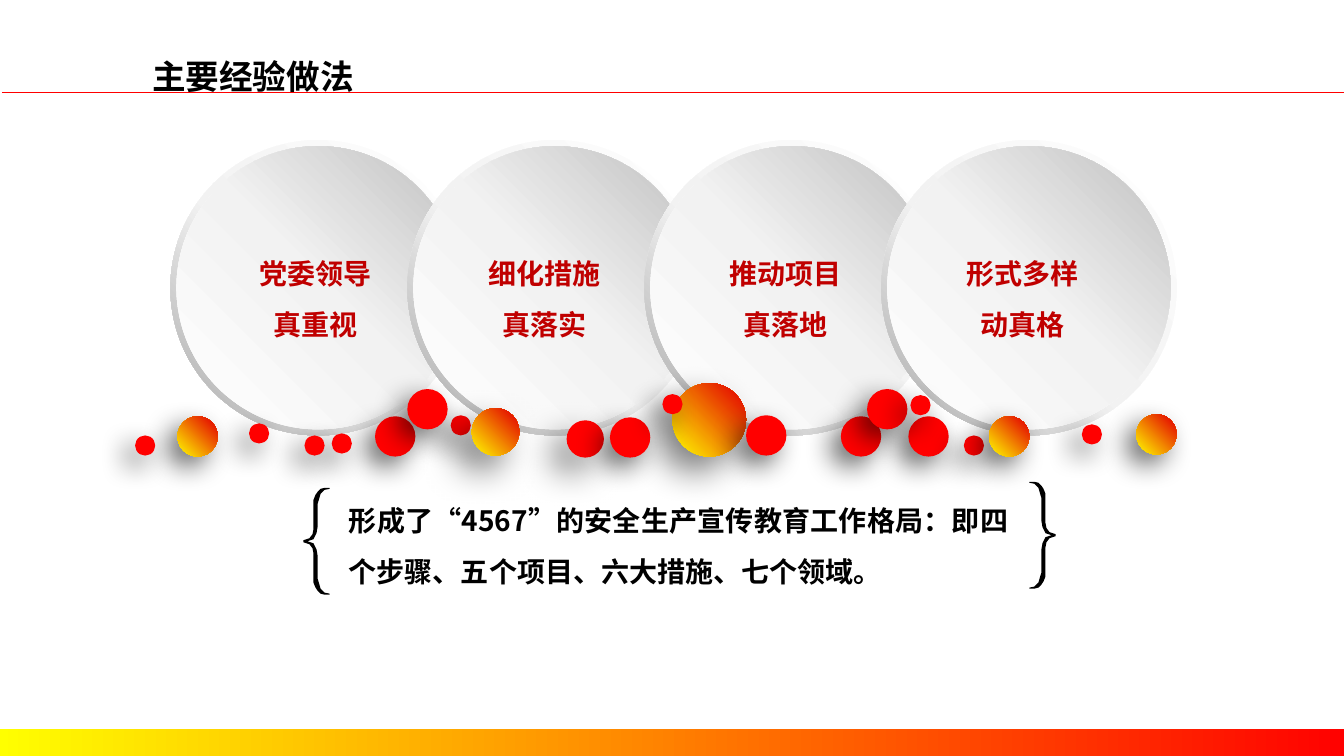
from lxml.etree import SubElement
from pptx import Presentation
from pptx.dml.color import RGBColor
from pptx.enum.lang import MSO_LANGUAGE_ID as Lang
from pptx.enum.shapes import MSO_CONNECTOR as Link, MSO_SHAPE as Kind
from pptx.enum.text import MSO_AUTO_SIZE as Fit, PP_ALIGN as Align
from pptx.oxml.ns import qn
from pptx.util import Inches, Pt

FONT = "Noto Sans CJK SC"
TITLE = "主要经验做法"
SUMMARY = "形成了“4567”的安全生产宣传教育工作格局：即四个步骤、五个项目、六大措施、七个领域。"
STEPS = [
    (2.47, ["党委领导", "真重视"]),
    (4.74, ["细化措施", "真落实"]),
    (7.13, ["推动项目", "真落地"]),
    (9.48, ["形式多样", "动真格"]),
]
RING = [(0, "FFFFFF"), (55, "F2F2F2"), (100, "A6A6A6")]
DISC = [(0, "FFFFFF"), (51, "F2F2F2"), (100, "BFBFBF")]
GOLD = [(0, "FFFF00"), (96, "E30000")]
BAND = [(0, "FFFF00"), (100, "FF0000")]
RED = "FF0000"
BALLS = [
    (6.67, 3.8, 0.73, GOLD), (8.34, 4.13, 0.4, RED), (3.72, 4.13, 0.4, RED),
    (3.29, 4.3, 0.2, RED), (9.01, 4.13, 0.4, RED), (4.47, 4.12, 0.2, RED),
    (9.56, 4.32, 0.2, RED), (5.62, 4.17, 0.37, RED), (9.81, 4.13, 0.4, GOLD),
    (6.05, 4.14, 0.4, RED), (10.73, 4.21, 0.2, RED), (8.6, 3.86, 0.4, RED),
    (3.02, 4.32, 0.2, RED), (6.57, 3.91, 0.2, RED), (4.68, 4.05, 0.47, GOLD),
    (7.4, 4.12, 0.4, RED), (1.76, 4.13, 0.4, GOLD), (1.34, 4.32, 0.2, RED),
    (4.04, 3.86, 0.4, RED), (2.47, 4.2, 0.2, RED), (9.03, 3.92, 0.2, RED),
    (11.27, 4.11, 0.4, GOLD),
]
SOFT = (60, 20, 10)
DEEP = (50, 25, 15)
OUTER = [
    (0, 0), (0.05, 0), (0.09, 0.01), (0.12, 0.04), (0.14, 0.07), (0.16, 0.12),
    (0.16, 0.41), (0.17, 0.46), (0.2, 0.5), (0.26, 0.52),
]
INNER = [
    (0, 0.01), (0.05, 0.02), (0.09, 0.06), (0.11, 0.13), (0.12, 0.16),
    (0.12, 0.39), (0.13, 0.45), (0.16, 0.51), (0.22, 0.53),
]
BRACES = [(3.27, 4.84, -1), (10.21, 4.78, 1)]
TALL = 1.06

deck = Presentation()
deck.slide_width, deck.slide_height = Inches(13.33), Inches(7.5)
slide = deck.slides.add_slide(deck.slide_layouts[6])
shapes = slide.shapes


def color(code):
    return RGBColor.from_string(code)


def paint(shape, fill, angle=315):
    shape.shadow.inherit = False
    shape.line.fill.background()
    if isinstance(fill, str):
        shape.fill.solid()
        shape.fill.fore_color.rgb = color(fill)
        return
    shape.fill.gradient()
    shape.fill.gradient_angle = (360 - angle) % 360
    stops = shape._element.spPr.find(qn("a:gradFill")).find(qn("a:gsLst"))
    for stop in list(stops):
        stops.remove(stop)
    for place, code in fill:
        stop = SubElement(stops, qn("a:gs"), pos=str(place * 1000))
        SubElement(stop, qn("a:srgbClr"), val=code)


def draw(home, kind, x, y, w, h, fill, angle=315):
    shape = home.add_shape(kind, Inches(x), Inches(y), Inches(w), Inches(h))
    paint(shape, fill, angle)
    return shape


def shade(shape, alpha, blur, dist):
    effects = shape._element.spPr.find(qn("a:effectLst"))
    outer = SubElement(effects, qn("a:outerShdw"), blurRad=str(Pt(blur)),
                       dist=str(Pt(dist)), dir=str(135 * 60000),
                       algn="tr", rotWithShape="0")
    tint = SubElement(outer, qn("a:srgbClr"), val="000000")
    SubElement(tint, qn("a:alpha"), val=str(alpha * 1000))


def write(x, y, w, h, lines, size, code, align, wrap=True, inset=True):
    box = shapes.add_textbox(Inches(x), Inches(y), Inches(w), Inches(h))
    frame = box.text_frame
    frame.word_wrap = wrap
    frame.auto_size = Fit.SHAPE_TO_FIT_TEXT
    if not inset:
        frame.margin_left = frame.margin_right = 0
        frame.margin_top = frame.margin_bottom = 0
    frame.text = "\n".join(lines)
    for para in frame.paragraphs:
        para.alignment = align
        para.line_spacing = 1.5
        font = para.font
        font.name, font.size, font.bold = FONT, Pt(size), True
        font.color.rgb = color(code)
        font.language_id = Lang.SIMPLIFIED_CHINESE
        SubElement(font._element, qn("a:ea"), typeface=FONT)


def flip(points):
    return [(x, TALL - y) for x, y in points]


def brace(x, y, side):
    loop = OUTER + flip(OUTER[::-1]) + flip(INNER) + INNER[-2::-1]
    spots = [(Inches(x + side * px), Inches(y + py)) for px, py in loop]
    form = shapes.build_freeform(*spots[0])
    form.add_line_segments(spots[1:], close=True)
    paint(form.convert_to_shape(), "000000")


write(1.41, 0.31, 5.12, 0.71, [TITLE], 24, "000000", Align.LEFT)

for i in range(len(STEPS)):
    left = 1.69 + i * 2.35
    group = shapes.add_group_shape().shapes
    ring = draw(group, Kind.DONUT, left, 1.39, 2.93, 2.93, RING, 135)
    ring.adjustments[0] = 0.049
    draw(group, Kind.OVAL, left + 0.06, 1.45, 2.81, 2.81, DISC)
for left, lines in STEPS:
    write(left, 2.33, 1.32, 1.05, lines, 20, "C00000", Align.CENTER, wrap=False)

for x, y, d, fill in BALLS:
    ball = draw(shapes, Kind.OVAL, x, y, d, d, fill)
    shade(ball, *(SOFT if d in (0.2, 0.4) else DEEP))

write(3.46, 4.83, 6.54, 0.97, [SUMMARY], 20, "000000", Align.JUSTIFY, inset=False)
for spot in BRACES:
    brace(*spot)

draw(shapes, Kind.RECTANGLE, -0.03, 7.23, 13.43, 0.27, BAND, 0)
rule = shapes.add_connector(Link.STRAIGHT, Inches(0.02), Inches(0.92),
                            Inches(13.33), Inches(0.92))
rule.line.color.rgb = color(RED)
rule.line.width = Pt(0.75)
SubElement(rule._element.spPr, qn("a:effectLst"))

deck.save("out.pptx")
